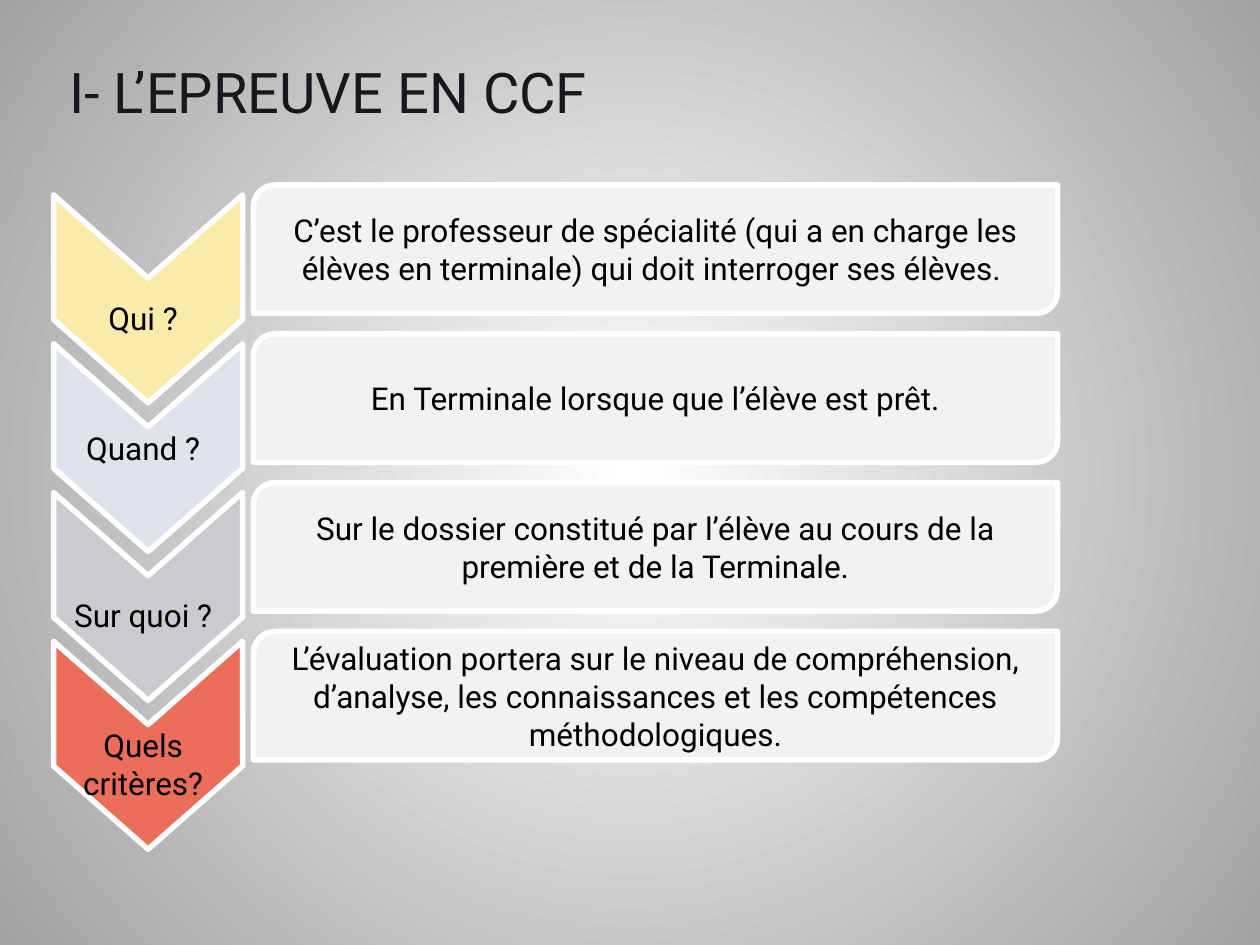
from lxml import etree
from pptx import Presentation
from pptx import util as u
from pptx.dml import color
from pptx.enum import shapes, text
from pptx.oxml import ns

Cm, Pt = u.Cm, u.Pt


def rgb(code):
    return color.RGBColor.from_string(code)


class Deck:
    font, ink, edge = "Roboto", "000000", "FFFFFF"

    def __init__(self):
        self.prs = Presentation()
        self.prs.slide_width, self.prs.slide_height = Cm(25.4), Cm(19.05)
        self.slide = self.prs.slides.add_slide(self.prs.slide_layouts[6])

    def glow(self, inner, outer):
        """Radial background from the centre of the slide."""
        fill = self.slide.background.fill
        fill.gradient()
        for stop, code in zip(fill.gradient_stops, (inner, outer)):
            stop.color.rgb = rgb(code)
        grad = self.slide.element.find(".//" + ns.qn("a:gradFill"))
        grad.remove(grad.find(ns.qn("a:lin")))
        way = etree.SubElement(grad, ns.qn("a:path"), {"path": "circle"})
        mid = dict.fromkeys("ltrb", "50000")
        etree.SubElement(way, ns.qn("a:fillToRect"), mid)

    def label(self, shape, words, size, ink, align, anchor, pads):
        frame = shape.text_frame
        frame.word_wrap = True
        frame.vertical_anchor = anchor
        (frame.margin_left, frame.margin_top,
         frame.margin_right, frame.margin_bottom) = map(Cm, pads)
        frame.text = words
        para = frame.paragraphs[0]
        para.alignment = align
        font = para.runs[0].font
        font.name, font.size, font.color.rgb = self.font, Pt(size), rgb(ink)

    def title(self, words, x, y, w, h):
        box = self.slide.shapes.add_textbox(Cm(x), Cm(y), Cm(w), Cm(h))
        self.label(box, words, 32, "16181B", text.PP_ALIGN.LEFT,
                   text.MSO_ANCHOR.BOTTOM, (0.13, 0, 0.13, 0))

    def block(self, kind, words, x, y, w, h, fill, pads):
        shape = self.slide.shapes.add_shape(kind, Cm(x), Cm(y), Cm(w), Cm(h))
        shape.shadow.inherit = False
        shape.fill.solid()
        shape.fill.fore_color.rgb = rgb(fill)
        shape.line.color.rgb = rgb(self.edge)
        shape.line.width = Pt(3.15)
        self.label(shape, words, 18, self.ink, text.PP_ALIGN.CENTER,
                   text.MSO_ANCHOR.MIDDLE, pads)
        return shape

    def arrow(self, words, y, fill, low):
        # Turned a quarter: the left inset acts as the upper one
        pads = (0.76, 0.3, 0, 0.1) if low else (0.25, 0.3, 0.25, 0.1)
        shape = self.block(shapes.MSO_SHAPE.CHEVRON, words,
                           0.89, y, 4.19, 3.81, fill, pads)
        shape.adjustments[0] = 0.44
        shape.rotation = 90
        body = shape.element.find(".//" + ns.qn("a:bodyPr"))
        body.set("vert", "vert270")

    def panel(self, words, y):
        self.block(shapes.MSO_SHAPE.ROUND_2_DIAG_RECTANGLE, words,
                   5.11, y, 16.21, 2.59, "F2F2F2", (0.25, 0.13, 0.25, 0.13))


# Question, colour, text set low in the arrow, answer
ROWS = [
    ("Qui ?", "FBEBAB", True,
     "C’est le professeur de spécialité (qui a en charge les élèves en "
     "terminale) qui doit interroger ses élèves. "),
    ("Quand ?", "DFE3EE", False,
     "En Terminale lorsque que l’élève est prêt."),
    ("Sur quoi ?", "C9CBCE", True,
     "Sur le dossier constitué par l’élève au cours de la première et de "
     "la Terminale."),
    ("Quels critères?", "EB6E5A", True,
     "L’évaluation portera sur le niveau de compréhension, d’analyse, les "
     "connaissances et les compétences méthodologiques."),
]
STEP = 3


def main():
    deck = Deck()

    # Background and title
    deck.glow("FFFFFF", "A2A2A2")
    deck.title("I- L’EPREUVE EN CCF", 1.27, 0.89, 20.12, 1.63)

    # Rows, the last one at the back
    for i, (ask, fill, low, reply) in reversed(list(enumerate(ROWS))):
        deck.arrow(ask, 4.12 + i * STEP, fill, low)
        deck.panel(reply, 3.73 + i * STEP)

    deck.prs.save("out.pptx")


if __name__ == "__main__":
    main()
